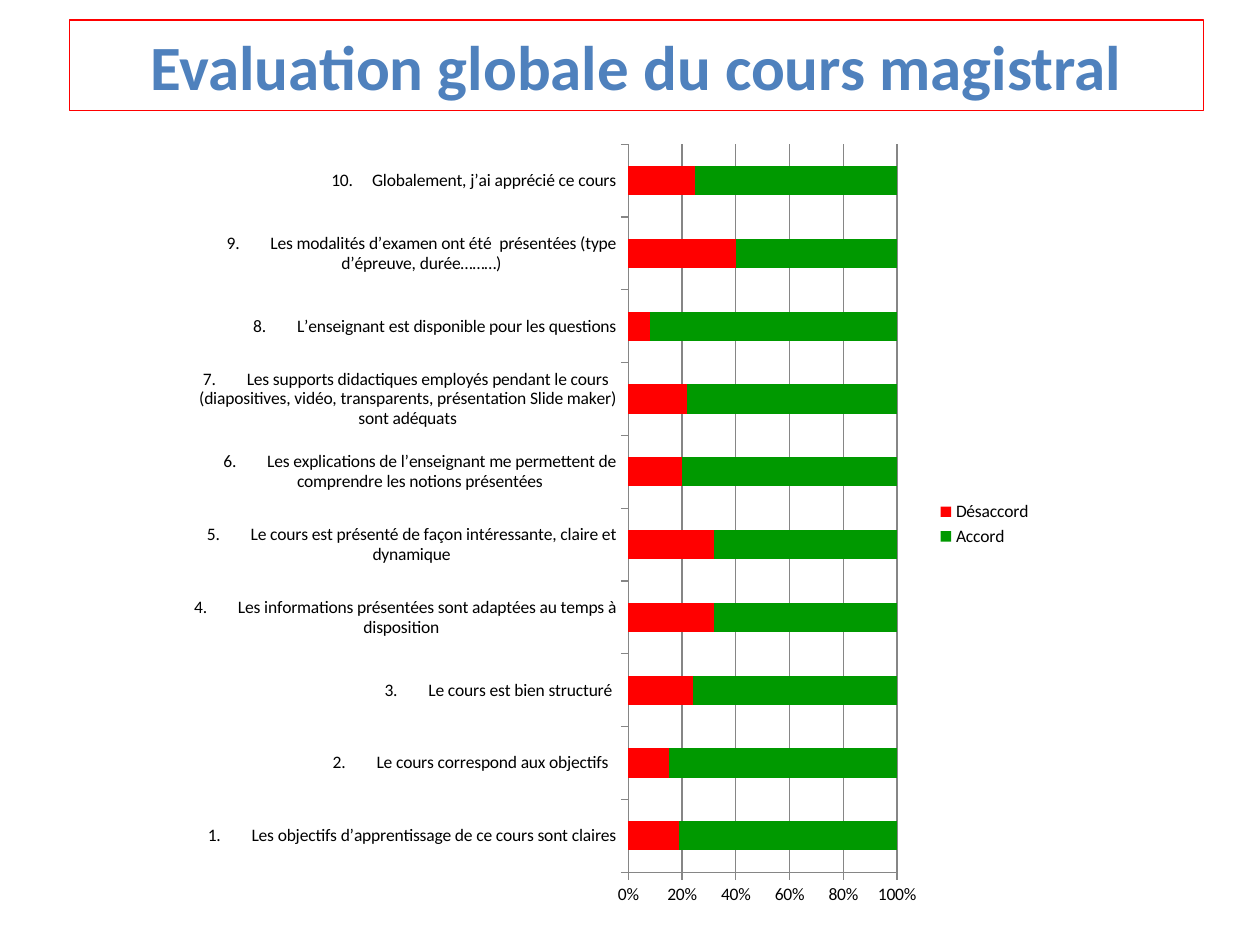
from lxml import etree
from pptx import Presentation
from pptx.chart.data import CategoryChartData
from pptx.dml.color import RGBColor
from pptx.enum.chart import XL_CHART_TYPE as ChartType
from pptx.enum.chart import XL_LEGEND_POSITION as LegendPosition
from pptx.enum.chart import XL_TICK_MARK as TickMark
from pptx.enum.text import MSO_ANCHOR as Anchor
from pptx.enum.text import PP_ALIGN as Align
from pptx.oxml.ns import qn
from pptx.util import Inches, Pt

# Content
TITLE = "Evaluation globale du cours magistral"
DISAGREE, AGREE = "Désaccord", "Accord"
# Question, percentage of disagreement
ANSWERS = [
    ("Les objectifs d’apprentissage de ce cours sont claires", 19),
    ("Le cours correspond aux objectifs  ", 15),
    ("Le cours est bien structuré ", 24),
    ("Les informations présentées sont adaptées au temps à disposition  ", 32),
    ("Le cours est présenté de façon intéressante, claire et dynamique", 32),
    ("Les explications de l’enseignant me permettent de comprendre "
     "les notions présentées", 20),
    ("Les supports didactiques employés pendant le cours  (diapositives, vidéo, "
     "transparents, présentation Slide maker) sont adéquats", 22),
    ("L’enseignant est disponible pour les questions", 8),
    ("Les modalités d’examen ont été  présentées (type d’épreuve, durée………)", 40),
    ("Globalement, j’ai apprécié ce cours", 25),
]

# Style
FONT = "Calibri"
RED = RGBColor(0xFF, 0x00, 0x00)
GREEN = RGBColor(0x00, 0x99, 0x00)
BLUE = RGBColor(0x4F, 0x81, 0xBD)
BLACK = RGBColor(0x00, 0x00, 0x00)
GREY = RGBColor(0x86, 0x86, 0x86)
TITLE_FONT = {"name": FONT, "size": Pt(36), "bold": True}
CHART_FONT = {"name": FONT, "size": Pt(10), "bold": False}
TITLE_BOX = {"left": Inches(0.55), "top": Inches(0.16),
             "width": Inches(9), "height": Inches(0.72)}
CHART_BOX = [Inches(n) for n in (1.41, 1.02, 6.88, 6.28)]
PLOT_AREA = {"x": 0.52, "y": 0.02, "w": 0.31, "h": 0.92}  # shares of the chart


def apply(target, values):
    for key, value in values.items():
        setattr(target, key, value)


def set_font(font, values, color):
    apply(font, values)
    font.color.rgb = color


def numbered(number, question):
    gap = chr(160) * (7 if number < 10 else 4)  # non-breaking spaces
    return f"{number}.{gap} {question}"


def place_plot(chart, shares):
    plot_area = chart._chartSpace.chart.plotArea
    for old in plot_area.findall(qn("c:layout")):
        plot_area.remove(old)
    layout = etree.Element(qn("c:layout"))
    manual = etree.SubElement(layout, qn("c:manualLayout"))
    settings = {"layoutTarget": "inner", "xMode": "edge", "yMode": "edge", **shares}
    for tag, value in settings.items():
        etree.SubElement(manual, qn(f"c:{tag}")).set("val", str(value))
    plot_area.insert(0, layout)


prs = Presentation()
apply(prs, {"slide_width": Inches(10), "slide_height": Inches(7.5)})
slide = prs.slides.add_slide(prs.slide_layouts[5])

# Stacked answers
answers = CategoryChartData(number_format="0")
answers.categories = [numbered(i, q) for i, (q, _) in enumerate(ANSWERS, 1)]
answers.add_series(DISAGREE, [share for _, share in ANSWERS])
answers.add_series(AGREE, [100 - share for _, share in ANSWERS])
chart = slide.shapes.add_chart(ChartType.BAR_STACKED_100, *CHART_BOX, answers).chart
set_font(chart.font, CHART_FONT, BLACK)
apply(chart, {"has_title": False, "has_legend": True})
apply(chart.legend, {"position": LegendPosition.RIGHT, "include_in_layout": False})
apply(chart.plots[0], {"gap_width": 150, "overlap": 100, "vary_by_categories": False})
for series, color in zip(chart.plots[0].series, (RED, GREEN)):
    series.format.fill.solid()
    series.format.fill.fore_color.rgb = color

# Axes
questions, percents = chart.category_axis, chart.value_axis
apply(percents, {"has_major_gridlines": True, "minimum_scale": 0,
                 "maximum_scale": 1, "major_unit": 0.2})
apply(percents.tick_labels, {"number_format": "0%", "number_format_is_linked": False})
for axis in (questions, percents):
    apply(axis, {"major_tick_mark": TickMark.OUTSIDE, "minor_tick_mark": TickMark.NONE})
for lined in (questions, percents, percents.major_gridlines):
    lined.format.line.color.rgb = GREY
    lined.format.line.width = Pt(0.75)
place_plot(chart, PLOT_AREA)

# Framed title
title = slide.shapes.title
apply(title, TITLE_BOX)
title.line.color.rgb = RED
title.line.width = Pt(0.75)
title.text_frame.text = TITLE
title.text_frame.vertical_anchor = Anchor.MIDDLE
heading = title.text_frame.paragraphs[0]
heading.alignment = Align.CENTER
set_font(heading.runs[0].font, TITLE_FONT, BLUE)

prs.save("out.pptx")
